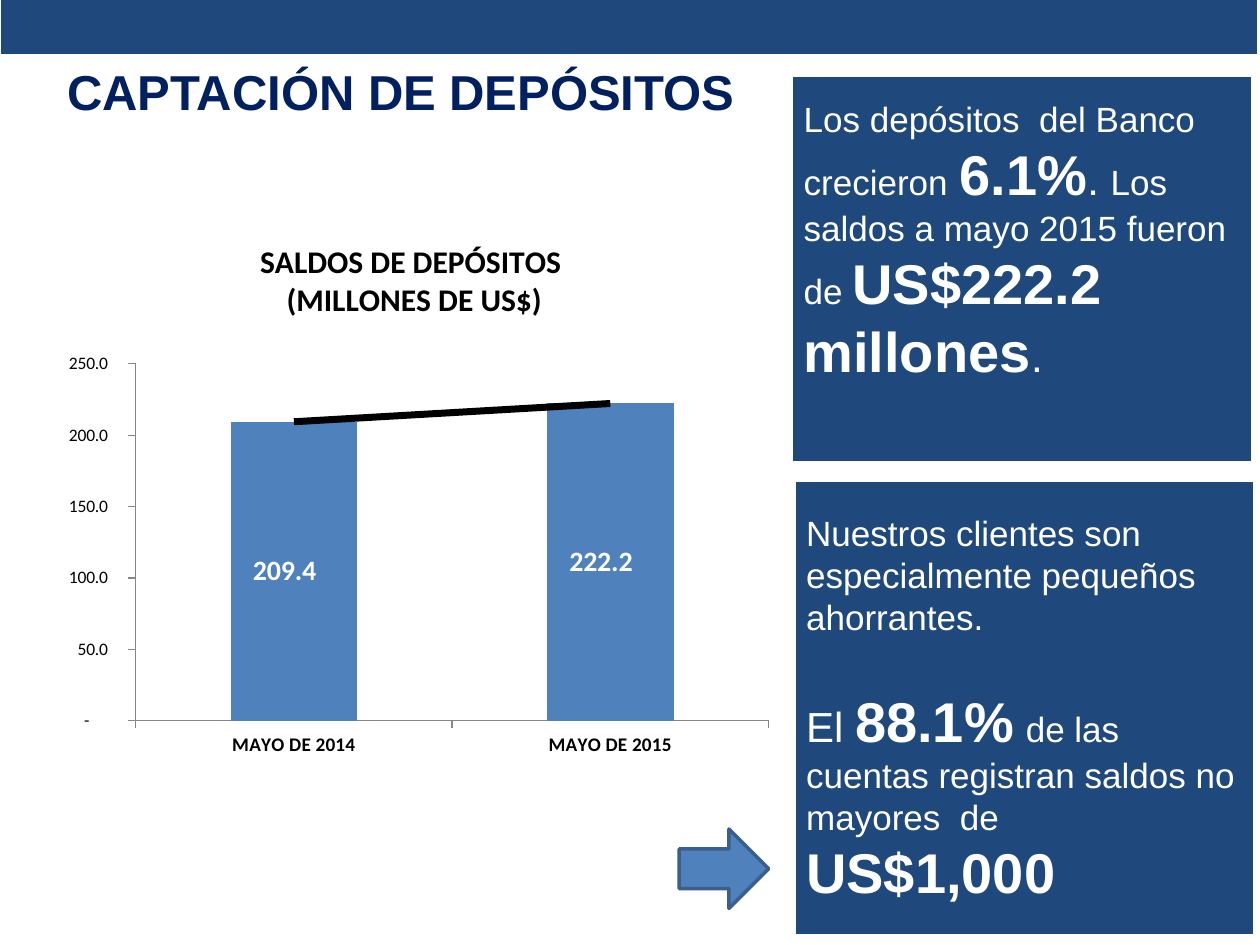
"""Build the deposit growth slide with a column chart, a trend line and two highlight boxes."""
from dataclasses import dataclass

from lxml import etree
from pptx import Presentation
from pptx.chart.data import CategoryChartData
from pptx.dml.color import RGBColor
from pptx.enum.chart import XL_CHART_TYPE, XL_LABEL_POSITION, XL_TICK_MARK
from pptx.enum.shapes import MSO_SHAPE
from pptx.enum.text import MSO_ANCHOR, MSO_AUTO_SIZE, PP_ALIGN
from pptx.oxml import parse_xml
from pptx.oxml.ns import nsdecls, qn
from pptx.util import Inches, Pt

COLUMNS = XL_CHART_TYPE.COLUMN_CLUSTERED
LABEL_CENTER = XL_LABEL_POSITION.CENTER
TICK_OUTSIDE, TICK_NONE = XL_TICK_MARK.OUTSIDE, XL_TICK_MARK.NONE
RECTANGLE, RIGHT_ARROW = MSO_SHAPE.RECTANGLE, MSO_SHAPE.RIGHT_ARROW
TOP, MIDDLE = MSO_ANCHOR.TOP, MSO_ANCHOR.MIDDLE
LEFT, CENTER = PP_ALIGN.LEFT, PP_ALIGN.CENTER
NO_AUTOFIT = MSO_AUTO_SIZE.NONE


@dataclass(frozen=True)
class Theme:
    heading_color: RGBColor = RGBColor(0x00, 0x20, 0x60)
    panel: RGBColor = RGBColor(0x1F, 0x49, 0x7D)
    accent: RGBColor = RGBColor(0x4F, 0x81, 0xBD)
    accent_edge: RGBColor = RGBColor(0x3A, 0x5F, 0x8C)
    axis: RGBColor = RGBColor(0x86, 0x86, 0x86)
    white: RGBColor = RGBColor(0xFF, 0xFF, 0xFF)
    black: RGBColor = RGBColor(0x00, 0x00, 0x00)
    text_font: str = "Arial"
    chart_font: str = "Calibri"
    heading: Pt = Pt(28)
    highlight: Pt = Pt(32)
    lead: Pt = Pt(24)
    body: Pt = Pt(20)
    chart_title: Pt = Pt(18)
    data_label: Pt = Pt(16)
    category: Pt = Pt(11)
    scale: Pt = Pt(10)


theme = Theme()
NUMBER_FORMAT = r'_-* #,##0.0\ _€_-;\-* #,##0.0\ _€_-;_-* "-"??\ _€_-;_-@_-'


def style_font(font, color, **values):
    """Apply a color and a dict of format values to a font."""
    font.color.rgb = color
    for name, value in values.items():
        setattr(font, name, value)


def add_block(page, kind, frame, fill, edge):
    """Add a filled shape with a two-point outline."""
    block = page.shapes.add_shape(kind, *(Inches(length) for length in frame))
    block.shadow.inherit = False
    block.fill.solid()
    block.fill.fore_color.rgb = fill
    block.line.color.rgb = edge
    block.line.width = Pt(2)
    return block


deck = Presentation()
deck.slide_width, deck.slide_height = Inches(10), Inches(7.5)
page = deck.slides.add_slide(deck.slide_layouts[5])

title = page.shapes.title
title_place = {"left": 0.02, "top": 0.44, "width": 6.32, "height": 0.87}
for name, value in title_place.items():
    setattr(title, name, Inches(value))
title.text_frame.auto_size = NO_AUTOFIT
title.text_frame.vertical_anchor = TOP
heading = title.text_frame.paragraphs[0]
heading.alignment = CENTER
heading.space_before = Pt(5.6)
span = heading.add_run()
span.text = "CAPTACIÓN DE DEPÓSITOS"
style_font(span.font, theme.heading_color, name=theme.text_font, size=theme.heading, bold=True)

band = add_block(page, RECTANGLE, (4.72, -4.83, 0.55, 10), theme.panel, theme.white)
band.rotation = 270

panels = [
    ((6.28, 0.6, 3.66, 3.07), 0.5, [[
        ("Los depósitos  del Banco crecieron", theme.body),
        (" ", theme.lead),
        ("6.1%", theme.highlight),
        (". ", theme.lead),
        ("Los saldos a mayo 2015 fueron de ", theme.body),
        ("US$222.2 millones", theme.highlight),
        (".", theme.lead),
    ]]),
    ((6.3, 3.81, 3.66, 3.62), 0.05, [
        [("Nuestros clientes son especialmente pequeños ahorrantes.", theme.body)],
        [
            ("El ", theme.lead),
            ("88.1%", theme.highlight),
            (" ", theme.lead),
            ("de las cuentas registran saldos no mayores  de ", theme.body),
            ("US$1,000", theme.highlight),
        ],
    ]),
]
for frame, bottom_inset, paragraphs in panels:
    box = add_block(page, RECTANGLE, frame, theme.panel, theme.white)
    text = box.text_frame
    text.word_wrap = True
    text.vertical_anchor = MIDDLE
    text.margin_bottom = Inches(bottom_inset)
    for index, spans in enumerate(paragraphs):
        para = text.add_paragraph() if index else text.paragraphs[0]
        para.alignment = LEFT
        para.space_before = Pt(28 * index)
        for wording, size in spans:
            span = para.add_run()
            span.text = wording
            style_font(span.font, theme.white, name=theme.text_font, size=size,
                       bold=size == theme.highlight)

balances = CategoryChartData(number_format="0.0")
balances.categories = ["MAYO DE 2014", "MAYO DE 2015"]
balances.add_series("Series 1", [209.4, 222.2])
chart = page.shapes.add_chart(
    COLUMNS, Inches(0.3), Inches(1.7), Inches(5.98), Inches(4.57), balances).chart
chart.has_legend = False
style_font(chart.font, theme.black, name=theme.chart_font, size=theme.scale)

chart.has_title = True
chart_heading = chart.chart_title.text_frame
chart_heading.text = "SALDOS DE DEPÓSITOS\n (MILLONES DE US$)"
for para in chart_heading.paragraphs:
    for span in para.runs:
        style_font(span.font, theme.black, name=theme.chart_font,
                   size=theme.chart_title, bold=True)

plot = chart.plots[0]
plot.gap_width = 150
plot.vary_by_categories = False
columns = plot.series[0]
columns.format.fill.solid()
columns.format.fill.fore_color.rgb = theme.accent
labels = columns.data_labels
label_values = {"show_value": True, "position": LABEL_CENTER,
                "number_format": NUMBER_FORMAT, "number_format_is_linked": False}
for name, value in label_values.items():
    setattr(labels, name, value)
style_font(labels.font, theme.white, name=theme.chart_font, size=theme.data_label, bold=True)

scale = chart.value_axis
for name, value in {"minimum_scale": 0, "maximum_scale": 250, "major_unit": 50}.items():
    setattr(scale, name, value)
scale.tick_labels.number_format = NUMBER_FORMAT
scale.tick_labels.number_format_is_linked = False
for axis, size, bold in ((scale, theme.scale, False), (chart.category_axis, theme.category, True)):
    axis.has_major_gridlines = False
    axis.major_tick_mark = TICK_OUTSIDE
    axis.minor_tick_mark = TICK_NONE
    axis.format.line.color.rgb = theme.axis
    style_font(axis.tick_labels.font, theme.black, name=theme.chart_font, size=size, bold=bold)

trend = parse_xml(
    f'<c:trendline {nsdecls("c", "a")}><c:spPr><a:ln w="{Pt(4)}" cap="flat"><a:solidFill>'
    f'<a:srgbClr val="{theme.black}"/></a:solidFill></a:ln></c:spPr>'
    '<c:trendlineType val="linear"/><c:dispRSqr val="0"/><c:dispEq val="0"/></c:trendline>')
columns._element.find(qn("c:cat")).addprevious(trend)

plot_area = chart._chartSpace.chart.plotArea
title_element = chart.chart_title._element
layouts = [
    (plot_area, {"layoutTarget": "inner", "xMode": "edge", "yMode": "edge",
                 "x": 0.13, "y": 0.26, "w": 0.84, "h": 0.62}),
    (title_element, {"xMode": "edge", "yMode": "edge", "x": 0.29, "y": 0.04}),
]
for owner, values in layouts:
    for old_layout in owner.findall(qn("c:layout")):
        owner.remove(old_layout)
    layout = etree.Element(qn("c:layout"))
    manual = etree.SubElement(layout, qn("c:manualLayout"))
    for name, value in values.items():
        etree.SubElement(manual, qn(f"c:{name}")).set("val", str(value))
    owner.insert(1 if owner is title_element else 0, layout)
chart.chart_title.include_in_layout = True

add_block(page, RIGHT_ARROW, (5.39, 6.58, 0.71, 0.63), theme.accent, theme.accent_edge)

deck.save("out.pptx")
